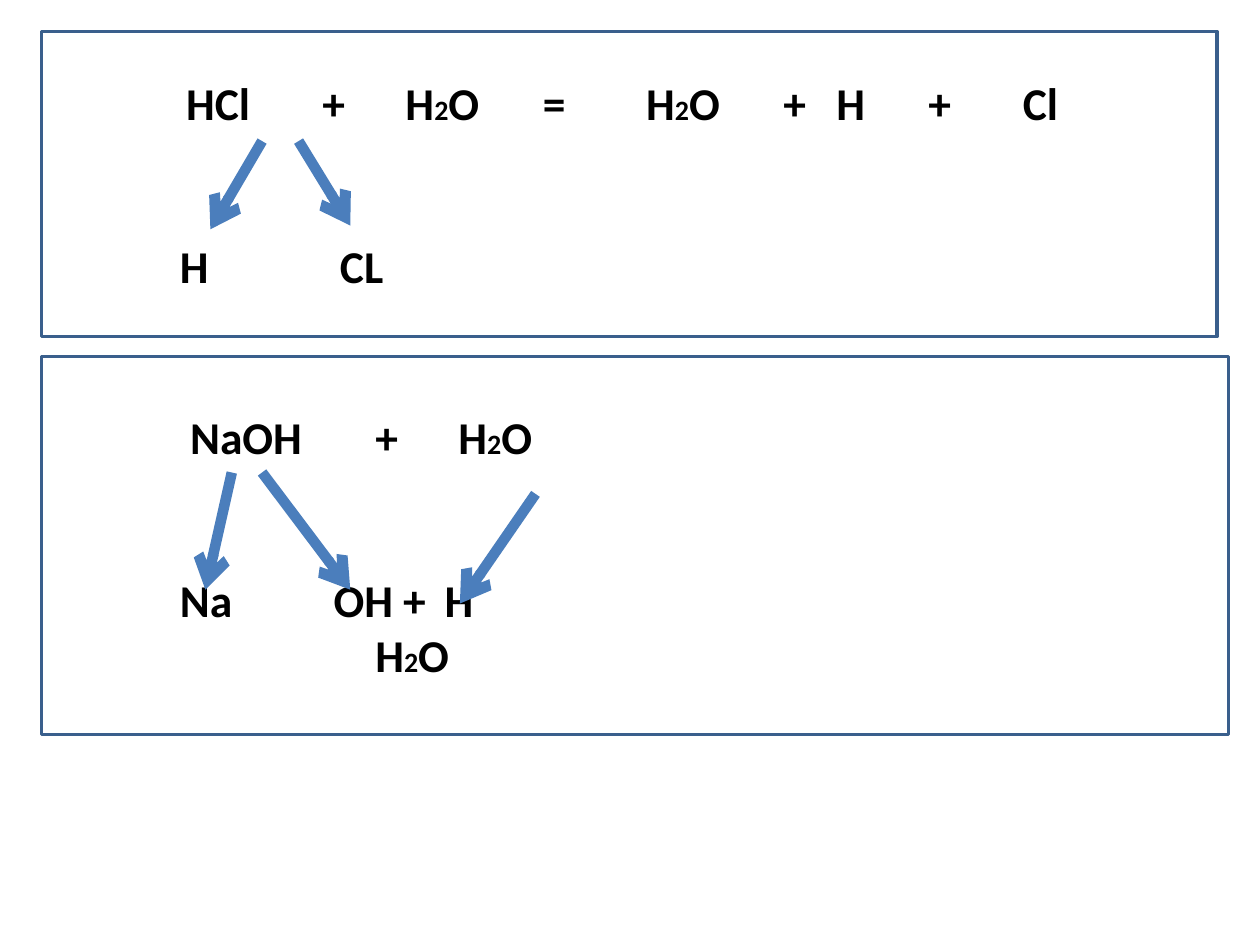
"""Build a slide showing how HCl and NaOH dissociate in water."""
from dataclasses import dataclass
from itertools import groupby

from pptx import Presentation
from pptx.dml.color import RGBColor
from pptx.enum.shapes import MSO_CONNECTOR, MSO_SHAPE
from pptx.enum.text import MSO_ANCHOR, PP_ALIGN
from pptx.oxml.ns import qn
from pptx.util import Inches, Pt
from lxml.etree import SubElement


@dataclass(frozen=True)
class Theme:
    font: str = "Calibri"
    text: RGBColor = RGBColor(0x00, 0x00, 0x00)
    border: RGBColor = RGBColor(0x3A, 0x5F, 0x8C)
    arrow: RGBColor = RGBColor(0x4B, 0x7E, 0xBC)
    size: Pt = Pt(26)
    digit_size: Pt = Pt(16)
    row_gap: Pt = Pt(62)
    border_width: Pt = Pt(2)
    arrow_width: Pt = Pt(6)


class SlideBuilder:
    def __init__(self, slide, theme):
        self.slide = slide
        self.theme = theme

    def panel(self, left, top, width, height, rows):
        sp = self.slide.shapes.add_shape(
            MSO_SHAPE.RECTANGLE, Inches(left), Inches(top), Inches(width), Inches(height))
        sp.shadow.inherit = False
        sp.fill.background()
        sp.line.color.rgb = self.theme.border
        sp.line.width = self.theme.border_width
        tf = sp.text_frame
        tf.word_wrap = True
        tf.vertical_anchor = MSO_ANCHOR.MIDDLE
        for i, (gap, terms) in enumerate(rows):
            p = tf.add_paragraph() if i else tf.paragraphs[0]
            self.row(p, gap, terms)

    def row(self, p, gap, terms):
        p.alignment = PP_ALIGN.LEFT
        p.space_before = gap
        tabs = SubElement(p._p.get_or_add_pPr(), qn("a:tabLst"))
        for pos, term in terms:
            SubElement(tabs, qn("a:tab"), pos=str(Inches(pos)), algn="l")
            self.run(p, "\t", self.theme.size)
            for is_digit, chars in groupby(term, str.isdigit):
                size = self.theme.digit_size if is_digit else self.theme.size
                self.run(p, "".join(chars), size)

    def run(self, p, text, size):
        r = p.add_run()
        r.text = text
        r.font.name = self.theme.font
        r.font.size = size
        r.font.bold = True
        r.font.color.rgb = self.theme.text

    def arrow(self, x1, y1, x2, y2):
        cxn = self.slide.shapes.add_connector(
            MSO_CONNECTOR.STRAIGHT, Inches(x1), Inches(y1), Inches(x2), Inches(y2))
        cxn.line.color.rgb = self.theme.arrow
        cxn.line.width = self.theme.arrow_width
        SubElement(cxn.line._get_or_add_ln(), qn("a:tailEnd"), type="arrow")
        SubElement(cxn._element.spPr, qn("a:effectLst"))


def main():
    prs = Presentation()
    prs.slide_width, prs.slide_height = Inches(10), Inches(7.5)
    theme = Theme()
    s = SlideBuilder(prs.slides.add_slide(prs.slide_layouts[6]), theme)

    acid_rows = [
        (Pt(0), [(1.05, "HCl"), (2.13, "+"), (2.79, "H2O"), (3.88, "="), (4.7, "H2O"),
                 (5.79, "+"), (6.21, "H"), (6.94, "+"), (7.69, "Cl")]),
        (theme.row_gap, [(1, "H"), (2.27, "CL")]),
    ]
    base_rows = [
        (Pt(0), [(1.08, "NaOH"), (2.55, "+"), (3.21, "H2O")]),
        (theme.row_gap, [(1, "Na"), (2.22, "OH"), (2.77, "+"), (3.1, "H")]),
        (Pt(0), [(2.55, "H2O")]),
    ]
    s.panel(0.33, 0.25, 9.33, 2.42, acid_rows)
    s.panel(0.33, 2.83, 9.42, 3, base_rows)

    for ends in [
        (2.37, 1.12, 2.78, 1.79),
        (2.08, 1.12, 1.67, 1.82),
        (1.84, 3.75, 1.63, 4.68),
        (2.08, 3.75, 2.78, 4.68),
        (4.25, 3.92, 3.65, 4.79),
    ]:
        s.arrow(*ends)

    prs.save("out.pptx")


if __name__ == "__main__":
    main()
